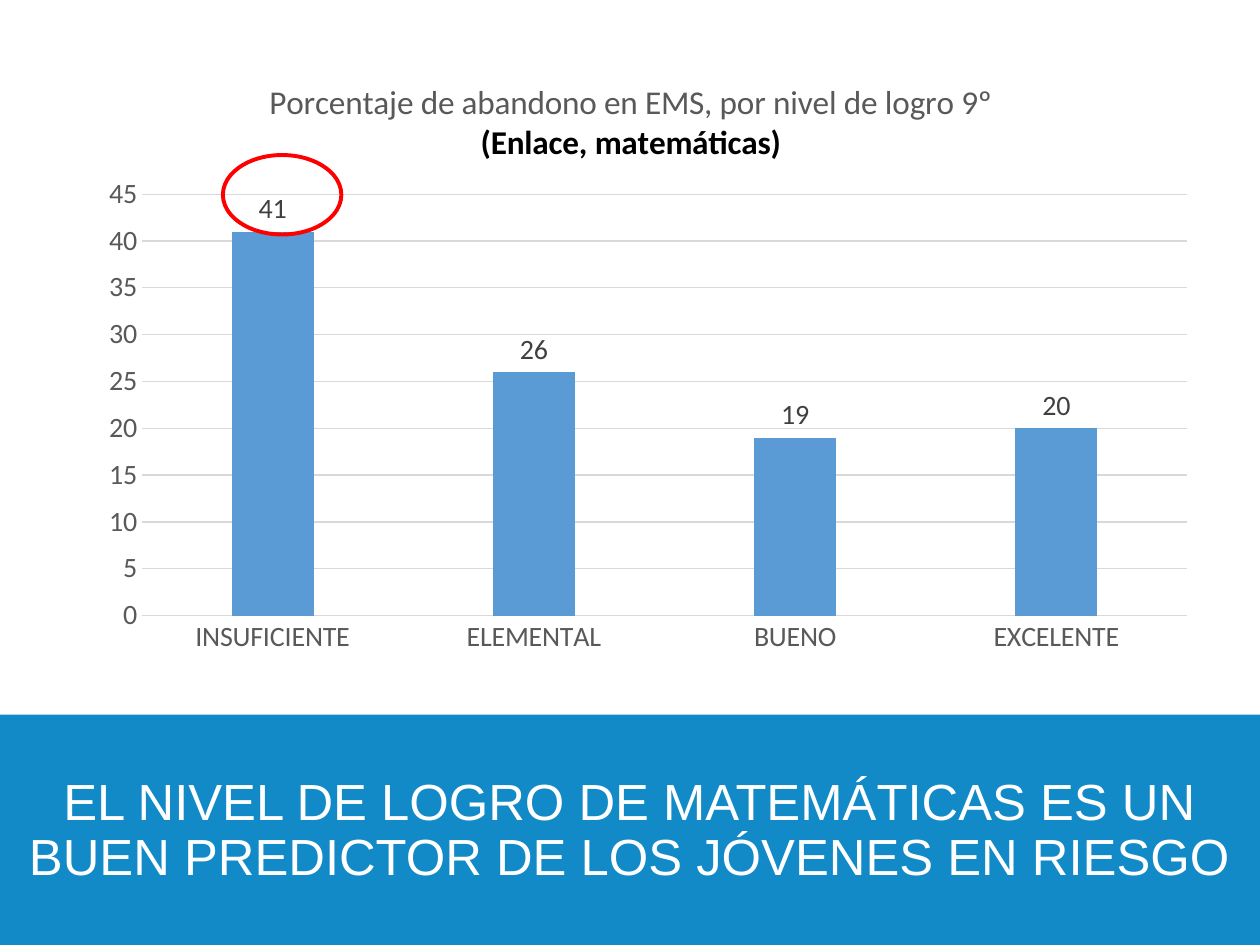
from dataclasses import dataclass

from lxml.etree import SubElement
from pptx import Presentation
from pptx.chart.data import CategoryChartData
from pptx.dml.color import RGBColor
from pptx.enum.chart import XL_CHART_TYPE as ChartType
from pptx.enum.chart import XL_LABEL_POSITION as LabelPosition
from pptx.enum.chart import XL_TICK_MARK as TickMark
from pptx.enum.shapes import MSO_SHAPE as ShapeType
from pptx.enum.text import MSO_ANCHOR as Anchor
from pptx.enum.text import MSO_AUTO_SIZE as AutoSize
from pptx.enum.text import PP_ALIGN as Align
from pptx.oxml.ns import qn
from pptx.util import Pt


@dataclass(frozen=True)
class Theme:
    band: str = "118AC7"
    bar: str = "5B9BD5"
    grid: str = "D9D9D9"
    axis_text: str = "595959"
    label_text: str = "404040"
    black: str = "000000"
    white: str = "FFFFFF"
    highlight: str = "FF0000"
    heading_font: str = "Arial"
    chart_font: str = "Calibri"
    heading_size: float = 29
    chart_title_size: float = 19
    chart_size: float = 16


def set_attributes(target, values):
    for name, value in values.items():
        setattr(target, name, value)


def set_layout(layout, fractions, inner=False):
    """Fix a chart part at fractions of the chart's width and height."""
    manual = SubElement(layout, qn("c:manualLayout"))
    settings = {"layoutTarget": "inner"} if inner else {}
    settings.update({f"{key}Mode": "edge" for key in ("x", "y")})
    settings.update(fractions)
    for name, value in settings.items():
        SubElement(manual, qn(f"c:{name}")).set("val", str(value))


def new_layout(parent, after=None):
    for old in parent.findall(qn("c:layout")):
        parent.remove(old)
    layout = SubElement(parent, qn("c:layout"))
    if after is None:
        parent.insert(0, layout)
    else:
        after.addnext(layout)
    return layout


class SlideBuilder:
    def __init__(self, slide, theme):
        self.slide = slide
        self.theme = theme

    def style_font(self, font, size, color, name=None, bold=False):
        set_attributes(font, {"size": Pt(size), "bold": bold,
                              "name": name or self.theme.chart_font})
        font.color.rgb = RGBColor.from_string(color)

    def style_line(self, line, color, width):
        line.color.rgb = RGBColor.from_string(color)
        line.width = Pt(width)

    def shape(self, kind, box, fill=None, line=None, width=0):
        shape = self.slide.shapes.add_shape(kind, *map(Pt, box))
        shape.shadow.inherit = False
        if fill:
            shape.fill.solid()
            shape.fill.fore_color.rgb = RGBColor.from_string(fill)
        else:
            shape.fill.background()
        if line:
            self.style_line(shape.line, line, width)
        else:
            shape.line.fill.background()
        return shape

    def title(self, text, box, backdrop):
        title = self.slide.shapes.title
        set_attributes(title, dict(zip(("left", "top", "width", "height"), map(Pt, box))))
        frame = title.text_frame
        set_attributes(frame, {"text": text, "word_wrap": True,
                               "auto_size": AutoSize.SHAPE_TO_FIT_TEXT,
                               "vertical_anchor": Anchor.MIDDLE})
        paragraph = frame.paragraphs[0]
        set_attributes(paragraph, {"alignment": Align.CENTER, "line_spacing": 0.9})
        self.style_font(paragraph.runs[0].font, self.theme.heading_size,
                        self.theme.white, self.theme.heading_font)
        # Keep the band behind the title
        title.element.addprevious(backdrop.element)

    def chart_title(self, chart, lines):
        set_attributes(chart, {"has_title": True})
        chart_title = chart.chart_title
        frame = chart_title.text_frame
        for index, (text, color, bold) in enumerate(lines):
            paragraph = frame.add_paragraph() if index else frame.paragraphs[0]
            paragraph.alignment = Align.CENTER
            run = paragraph.add_run()
            run.text = text
            self.style_font(run.font, self.theme.chart_title_size, color, bold=bold)
        chart_title.include_in_layout = False
        element = chart_title.element
        set_layout(new_layout(element, element.find(qn("c:tx"))), {"x": 0.16, "y": 0.04})

    def column_chart(self, box, values, title_lines):
        theme = self.theme
        data = CategoryChartData(number_format="0")
        data.categories = list(values)
        data.add_series("Abandono", list(values.values()))
        chart = self.slide.shapes.add_chart(
            ChartType.COLUMN_CLUSTERED, *map(Pt, box), data).chart
        chart.has_legend = False
        self.style_font(chart.font, theme.chart_size, theme.black)
        self.chart_title(chart, title_lines)

        # Axes and gridlines
        for axis in (chart.category_axis, chart.value_axis):
            set_attributes(axis, {"major_tick_mark": TickMark.NONE,
                                  "minor_tick_mark": TickMark.NONE})
            self.style_font(axis.tick_labels.font, theme.chart_size, theme.axis_text)
        self.style_line(chart.category_axis.format.line, theme.grid, 0.75)
        value_axis = chart.value_axis
        set_attributes(value_axis, {"minimum_scale": 0, "maximum_scale": 45,
                                    "major_unit": 5, "has_major_gridlines": True})
        set_attributes(value_axis.tick_labels,
                       {"number_format": "0", "number_format_is_linked": False})
        value_axis.format.line.fill.background()
        self.style_line(value_axis.major_gridlines.format.line, theme.grid, 0.75)

        # Columns and their labels
        plot = chart.plots[0]
        set_attributes(plot, {"gap_width": 219, "overlap": -27,
                              "vary_by_categories": False, "has_data_labels": True})
        fill = plot.series[0].format.fill
        fill.solid()
        fill.fore_color.rgb = RGBColor.from_string(theme.bar)
        labels = plot.data_labels
        set_attributes(labels, {"show_value": True, "number_format": "0",
                                "number_format_is_linked": False,
                                "position": LabelPosition.OUTSIDE_END})
        self.style_font(labels.font, theme.chart_size, theme.label_text)

        plot_area = chart.element.find(f".//{qn('c:plotArea')}")
        set_layout(new_layout(plot_area),
                   {"x": 0.05, "y": 0.23, "w": 0.93, "h": 0.68}, inner=True)


def main():
    presentation = Presentation()
    set_attributes(presentation, {"slide_width": Pt(720), "slide_height": Pt(540)})
    theme = Theme()
    builder = SlideBuilder(
        presentation.slides.add_slide(presentation.slide_layouts[5]), theme)

    # Bottom band with the message
    band = builder.shape(ShapeType.RECTANGLE, (0, 408.4, 720, 132), fill=theme.band)
    builder.title("EL NIVEL DE LOGRO DE MATEMÁTICAS ES UN BUEN PREDICTOR "
                  "DE LOS JÓVENES EN RIESGO", (0, 440, 720, 70.6), band)

    # Dropout by achievement level
    builder.column_chart(
        (49, 29.5, 642.2, 354.2),
        {"INSUFICIENTE": 41, "ELEMENTAL": 26, "BUENO": 19, "EXCELENTE": 20},
        [("Porcentaje de abandono en EMS, por nivel de logro 9º", theme.axis_text, False),
         ("(Enlace, matemáticas)", theme.black, True)])

    # Ring around the highest value
    builder.shape(ShapeType.OVAL, (127.4, 88.6, 67.7, 45.4),
                  line=theme.highlight, width=2.25)

    presentation.save("out.pptx")


if __name__ == "__main__":
    main()
